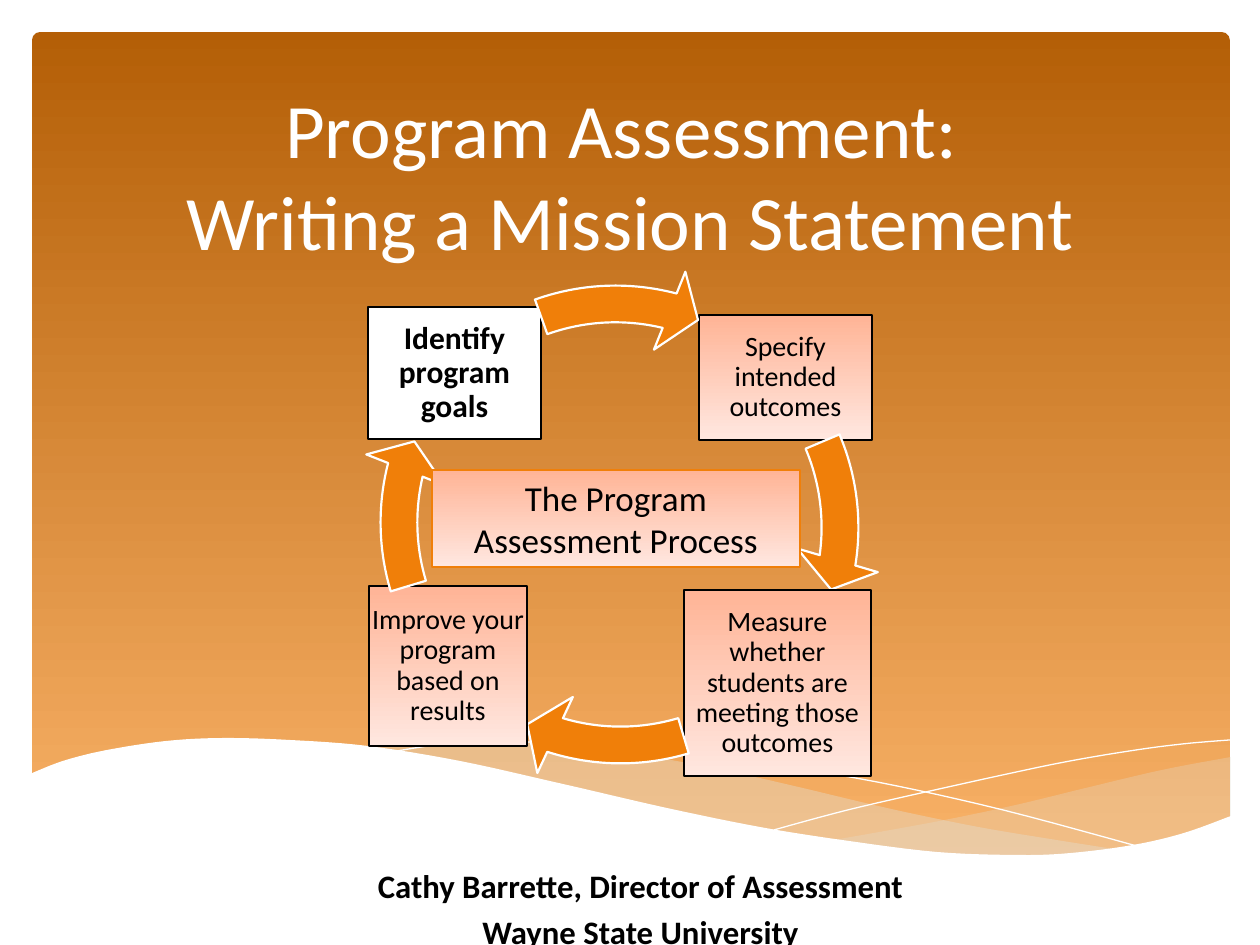
from dataclasses import dataclass

from lxml.etree import SubElement
from pptx import Presentation
from pptx.dml.color import RGBColor
from pptx.enum.shapes import MSO_SHAPE
from pptx.enum.text import MSO_ANCHOR, PP_ALIGN
from pptx.oxml.ns import qn
from pptx.util import Pt

SCALE = 914400 // 126
STEPS = 6
COLORS = {
    "white": "FFFFFF", "black": "000000", "orange": "F07F09", "sand": "E3DED1",
    "dark": "B45F07", "light": "F9B268", "peach": "FFB496", "pale": "FFE7E0",
}
BACKDROP = ("dark", "light")
BLUSH = ("peach", "pale")


@dataclass
class Wave:
    edges: tuple
    fill: str = ""
    opacity: int = 100
    line: str = ""


@dataclass
class Box:
    place: tuple
    lines: tuple
    size: float
    fill: object = BLUSH
    line: str = "black"
    line_width: float = 0.75
    color: str = "black"
    bold: bool = False
    insets: tuple = (3, 3, 3, 3)
    anchor: MSO_ANCHOR = MSO_ANCHOR.MIDDLE
    spacing: float = 0.9


@dataclass
class Arrow:
    left: int
    top: int
    head: float
    tail: float


FLOOR = ((29, 775), (29, 921), (1231, 921), (1231, 816))
WAVES = (
    Wave((
        ((1231, 757), (1162, 770), (1086, 788), (1016, 805), (950, 819), (891, 830), (834, 840)),
        ((834, 840), (890, 848), (955, 854), (1027, 857), (1100, 852), (1162, 840),
         (1198, 830), (1231, 818)),
    ), "sand", 29),
    Wave((
        ((1126, 851), (1056, 840), (978, 827), (891, 809), (794, 786), (736, 773), (665, 759),
         (586, 747), (504, 741), (435, 741), (362, 747)),
        ((362, 747), (432, 757), (510, 772), (567, 786), (668, 809), (759, 828), (839, 842),
         (911, 851), (990, 857), (1070, 856), (1126, 851)),
    ), "sand", 40),
    Wave((
        ((391, 752), (445, 744), (506, 742), (591, 744), (672, 751), (767, 764), (877, 782),
         (1003, 810), (1144, 848)),
    ), line="white"),
    Wave((
        ((774, 830), (848, 810), (944, 788), (1055, 764), (1130, 751), (1183, 744), (1230, 740)),
    ), line="white"),
    Wave((
        ((1231, 816), (1184, 833), (1133, 845), (1071, 853), (1019, 855), (937, 852), (842, 840),
         (760, 827), (667, 808), (563, 784), (460, 761), (368, 746), (290, 740), (223, 738),
         (166, 741), (107, 750), (66, 760), (37, 771), (29, 775)),
        *zip(FLOOR, FLOOR[1:]),
    ), "white"),
)
STEP_BOXES = (
    Box((699, 315, 173, 125), ("Specify intended outcomes",), 16),
    Box((684, 590, 187, 186), ("Measure whether students are meeting those outcomes",), 16),
    Box((369, 586, 158, 160), ("Improve your program based on results",), 16),
    Box((368, 307, 173, 132), ("Identify program goals",), 18, "white", bold=True,
        insets=(4, 4, 4, 4)),
)
ARROWS = (
    Arrow(357, 265, 5.14, 202.24),
    Arrow(358, 262, 64.35, 44.04),
    Arrow(357, 260, 116.28, 97.94),
    Arrow(353, 262, 170.53, 150.18),
)
TITLE = Box((95, 73, 1071, 199), ("Program Assessment: ", "Writing a Mission Statement"), 44,
            "", "", color="white", insets=(13, 6, 13, 6), anchor=MSO_ANCHOR.BOTTOM, spacing=1)
CENTER = Box((432, 470, 368, 97), ("The Program Assessment Process",), 20, line="orange",
             line_width=1.25, insets=(13, 6, 13, 6), spacing=1)
AUTHOR = Box((294, 829, 693, 116),
             ("Cathy Barrette, Director of Assessment", "Wayne State University"), 18.7,
             "", "", bold=True, insets=(13, 37, 13, 6), anchor=MSO_ANCHOR.TOP, spacing=1)


def rgb(name: str) -> RGBColor:
    """Look up a named colour."""
    return RGBColor.from_string(COLORS[name])


def assign(target: object, values: dict) -> None:
    """Set attributes from a dict of format values."""
    for name, value in values.items():
        setattr(target, name, value)


def paint(shape, fill, line: str, line_width: float = 0) -> None:
    """Set the fill, outline and shadow of a shape."""
    shape.shadow.inherit = False
    if isinstance(fill, tuple):
        shape.fill.gradient()
        shape.fill.gradient_angle = 270
        for stop, name, position in zip(shape.fill.gradient_stops, fill, (0, 1)):
            stop.color.rgb = rgb(name)
            stop.position = position
    elif fill:
        shape.fill.solid()
        shape.fill.fore_color.rgb = rgb(fill)
    else:
        shape.fill.background()
    if line:
        shape.line.color.rgb = rgb(line)
        shape.line.width = Pt(line_width)
    else:
        shape.line.fill.background()


def smooth_curve(points: tuple) -> list:
    """Sample a Catmull-Rom curve through the points."""
    padded = (points[0], *points, points[-1])
    curve = [points[0]]
    for a, b, c, d in zip(padded, padded[1:], padded[2:], padded[3:]):
        for step in range(1, STEPS + 1):
            t = step / STEPS
            curve.append(tuple(
                b[i] + t * (c[i] - a[i]) / 2
                + t ** 2 * (2 * a[i] - 5 * b[i] + 4 * c[i] - d[i]) / 2
                + t ** 3 * (3 * b[i] - a[i] - 3 * c[i] + d[i]) / 2
                for i in (0, 1)))
    return curve


def draw_wave(page, wave: Wave) -> None:
    """Draw a curved band or a thin curved line."""
    points = [(x * SCALE, y * SCALE) for edge in wave.edges for x, y in smooth_curve(edge)]
    builder = page.shapes.build_freeform(*points[0])
    builder.add_line_segments(points[1:], close=bool(wave.fill))
    shape = builder.convert_to_shape()
    paint(shape, wave.fill, wave.line)
    if wave.opacity < 100:
        color = shape.fill._xPr.find(qn("a:solidFill"))[0]
        SubElement(color, qn("a:alpha"), val=str(wave.opacity * 1000))


def draw_box(page, box: Box, paragraphs: bool = False) -> None:
    """Draw a box whose lines are paragraphs or are parted by line breaks."""
    place = [length * SCALE for length in box.place]
    if box.fill:
        shape = page.shapes.add_shape(MSO_SHAPE.RECTANGLE, *place)
        paint(shape, box.fill, box.line, box.line_width)
    else:
        shape = page.shapes.add_textbox(*place)
    frame = shape.text_frame
    sides = ("margin_left", "margin_top", "margin_right", "margin_bottom")
    assign(frame, dict(zip(sides, (inset * SCALE for inset in box.insets))))
    assign(frame, {"word_wrap": True, "vertical_anchor": box.anchor})
    para = frame.paragraphs[0]
    for index, line in enumerate(box.lines):
        if index and paragraphs:
            para = frame.add_paragraph()
            para.space_before = Pt(box.size * 0.2)
        elif index:
            para.add_line_break()
        assign(para, {"alignment": PP_ALIGN.CENTER, "line_spacing": box.spacing})
        span = para.add_run()
        span.text = line
        assign(span.font, {"name": "Calibri", "size": Pt(box.size), "bold": box.bold})
        span.font.color.rgb = rgb(box.color)


def draw_arrow(page, arrow: Arrow) -> None:
    """Draw one arc arrow of the cycle."""
    shape = page.shapes.add_shape(MSO_SHAPE.CIRCULAR_ARROW, arrow.left * SCALE,
                                  arrow.top * SCALE, 525 * SCALE, 525 * SCALE)
    for index, value in enumerate((0.07, 4.66, arrow.head, arrow.tail, 0.08)):
        shape.adjustments[index] = value
    paint(shape, "orange", "white", 1.25)


def main() -> None:
    """Build the slide and save it."""
    deck = Presentation()
    assign(deck, {"slide_width": 1260 * SCALE, "slide_height": 945 * SCALE})
    page = deck.slides.add_slide(deck.slide_layouts[6])
    backdrop = page.shapes.add_shape(MSO_SHAPE.ROUNDED_RECTANGLE, 32 * SCALE, 32 * SCALE,
                                     1198 * SCALE, 832 * SCALE)
    backdrop.adjustments[0] = 0.01
    paint(backdrop, BACKDROP, "")
    for wave in WAVES:
        draw_wave(page, wave)
    draw_box(page, TITLE)
    for box, arrow in zip(STEP_BOXES, ARROWS):
        draw_box(page, box)
        draw_arrow(page, arrow)
    draw_box(page, AUTHOR, paragraphs=True)
    draw_box(page, CENTER)
    deck.save("out.pptx")


if __name__ == "__main__":
    main()
